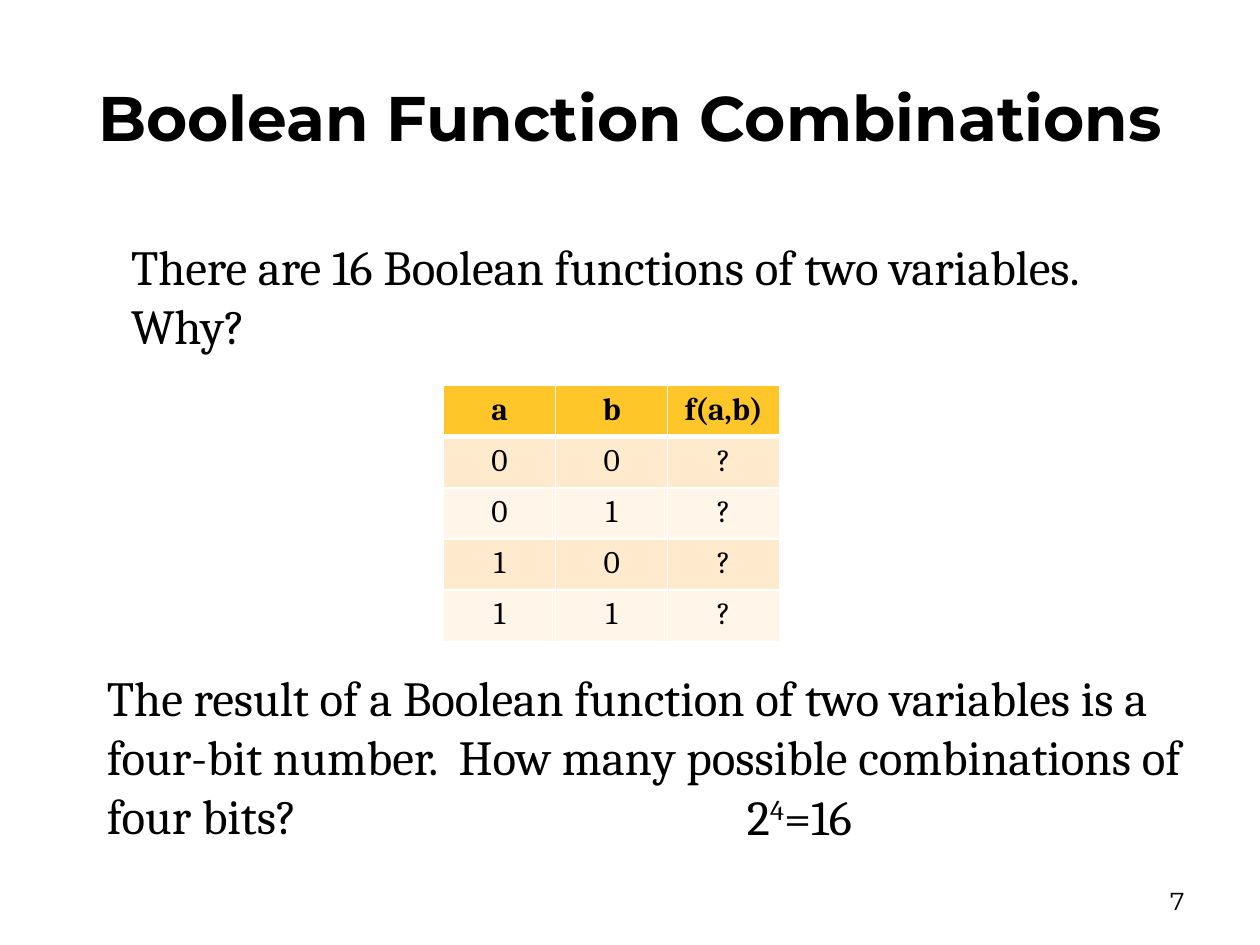
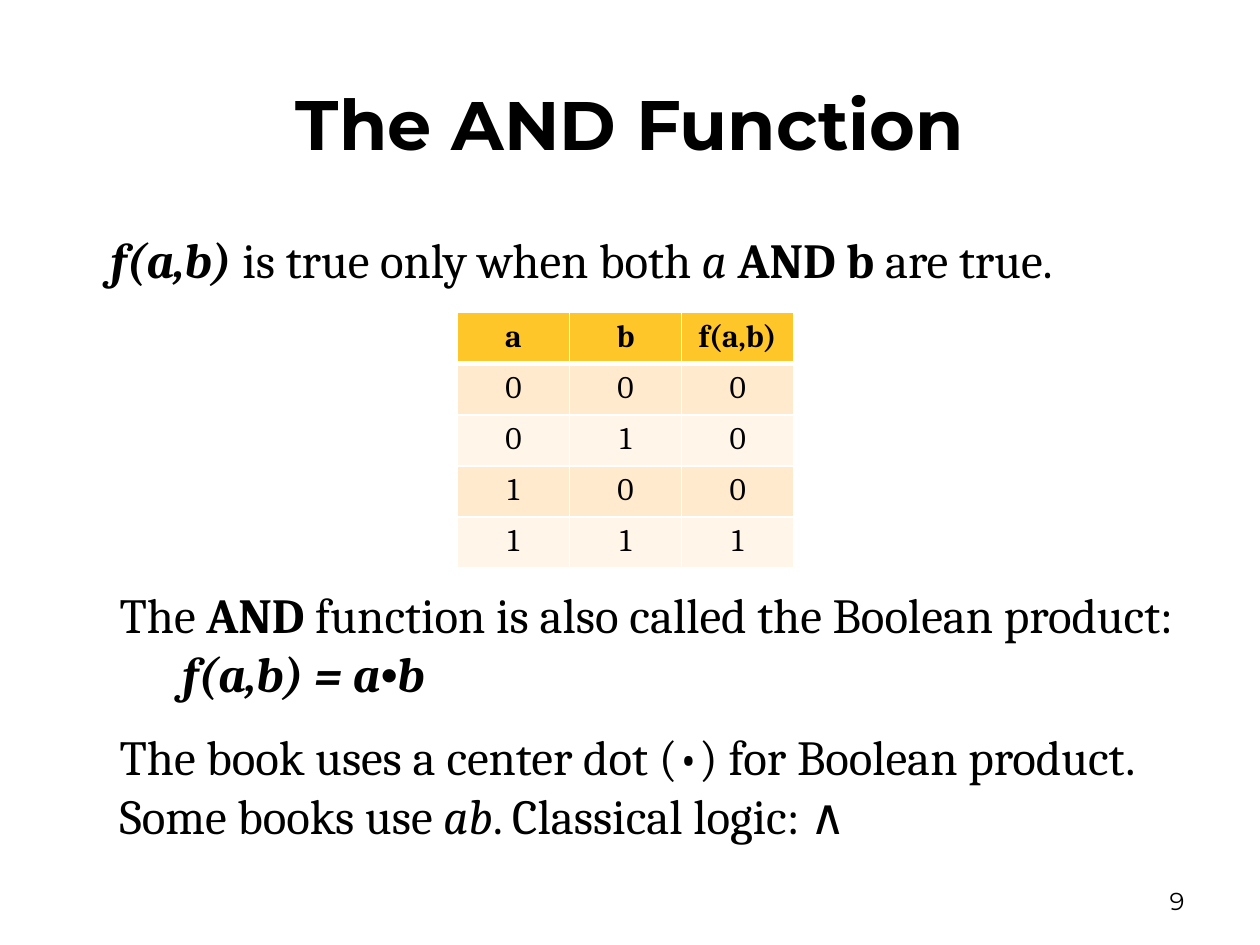
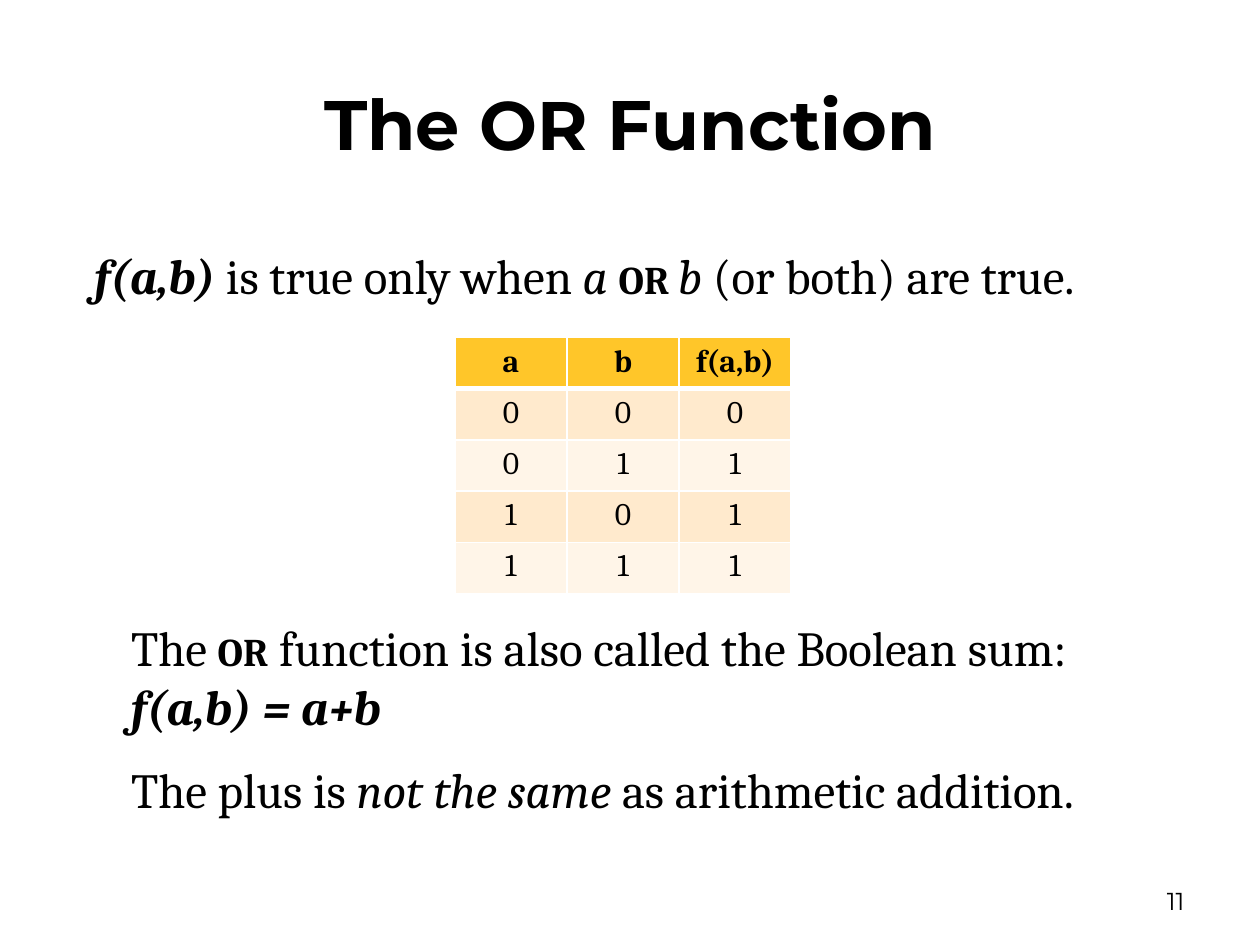
"""Build three slides on Boolean functions of two variables."""
from dataclasses import dataclass

from lxml.etree import SubElement
from pptx import Presentation
from pptx.dml.color import RGBColor
from pptx.enum.text import MSO_ANCHOR, MSO_AUTO_SIZE, PP_ALIGN
from pptx.oxml.ns import qn
from pptx.util import Inches, Pt


@dataclass
class Theme:
    ink: str = "000000"
    gold: str = "FFC629"
    bands: tuple = ("FFEACD", "FFF5E8")
    rule: str = "FFFFFF"
    head: str = "Montserrat"
    body: str = "Cambria"
    sign: str = "Times New Roman"
    text: int = 28
    cell: int = 18
    page: int = 14
    gap: int = 14


theme = Theme()


def write(frame, paras, face, size, align=PP_ALIGN.LEFT):
    """Fill a frame; flags: b bold, i italic, c small caps, u superscript, t sign font, L large."""
    for row, runs in enumerate(paras):
        para = frame.paragraphs[0] if row == 0 else frame.add_paragraph()
        para.alignment = align
        para.space_before = Pt(theme.gap if row else 0)
        for text, flags in runs:
            run = para.add_run()
            run.text = text
            font = run.font
            font.name = theme.sign if "t" in flags else face
            font.size = Pt(49 if "L" in flags else size)
            font.bold = "b" in flags
            font.italic = "i" in flags
            font.color.rgb = RGBColor.from_string(theme.ink)
            if "c" in flags:
                font._element.set("cap", "small")
            if "u" in flags:
                font._element.set("baseline", "30000")


def place(slide, spot, paras, inset=(0.12, 0.06)):
    """Add a wrapped body text box."""
    box = slide.shapes.add_textbox(*map(Inches, spot))
    frame = box.text_frame
    frame.word_wrap = True
    frame.auto_size = MSO_AUTO_SIZE.SHAPE_TO_FIT_TEXT
    frame.margin_left = frame.margin_right = Inches(inset[0])
    frame.margin_top = frame.margin_bottom = Inches(inset[1])
    write(frame, paras, theme.body, theme.text)


slim = (0.1, 0.05)
pages = [
    {
        "title": [("Boolean Function Combinations", "b")],
        "size": 36,
        "page": "7",
        "grid": (3.52, 3.06),
        "outs": "????",
        "boxes": [
            ((0.92, 1.82, 8.16, 1.1),
             [[("There are 16 Boolean functions of two variables.  Why?", "")]]),
            ((0.75, 5.25, 8.75, 1.51),
             [[("The result of a Boolean function of two variables is a four-bit number.  "
                "How many possible combinations of four bits?", "")]], slim),
            ((5.83, 6.19, 1.42, 0.57), [[("2", ""), ("4", "u"), ("=16", "")]], slim),
        ],
    },
    {
        "title": [("The ", "b"), ("and", "bcL"), (" Function", "b")],
        "size": 40,
        "page": "9",
        "grid": (3.63, 2.48),
        "outs": "0001",
        "boxes": [
            ((0.76, 1.76, 8.5, 0.61),
             [[("f(a,b)", "bi"), (" is true only when both ", ""), ("a ", "i"),
               ("AND b", "b"), (" are true.", "")]]),
            ((0.83, 4.58, 8.67, 2.32),
             [[("The ", ""), ("AND", "b"),
               (" function is also called the Boolean product: \t", ""),
               ("f(a,b) = a", "bi"), ("•", "bit"), ("b", "bi")],
              [("The book uses a center dot (•) for Boolean product. Some books use ", ""),
               ("ab", "i"), (". Classical logic: ∧", "")]]),
        ],
    },
    {
        "title": [("The ", "b"), ("or", "bcL"), (" Function", "b")],
        "size": 40,
        "page": "11",
        "grid": (3.61, 2.68),
        "outs": "0111",
        "boxes": [
            ((0.63, 1.89, 8.98, 0.61),
             [[("f(a,b)", "bi"), (" is true only when ", ""), ("a ", "i"),
               ("or ", "bc"), ("b", "i"), (" (or both) are true.", "")]]),
            ((0.92, 4.84, 8.44, 1.77),
             [[("The ", ""), ("or", "bc"),
               (" function is also called the Boolean sum: \t", ""),
               ("f(a,b) = a+b", "bi")],
              [("The plus is ", ""), ("not the same ", "i"),
               ("as arithmetic addition.", "")]]),
        ],
    },
]

deck = Presentation()
deck.slide_width, deck.slide_height = Inches(10), Inches(7.5)

for page in pages:
    slide = deck.slides.add_slide(deck.slide_layouts[5])
    title = slide.shapes.title
    title.left, title.top = Inches(0.5), Inches(0.3)
    title.width, title.height = Inches(9), Inches(1.25)
    title.text_frame.vertical_anchor = MSO_ANCHOR.MIDDLE
    title.text_frame.auto_size = MSO_AUTO_SIZE.NONE
    write(title.text_frame, [page["title"]], theme.head, page["size"], PP_ALIGN.CENTER)

    foot = slide.shapes.add_textbox(Inches(7.17), Inches(6.95), Inches(2.33), Inches(0.4))
    foot.text_frame.word_wrap = True
    foot.text_frame.vertical_anchor = MSO_ANCHOR.MIDDLE
    write(foot.text_frame, [[(page["page"], "")]], theme.head, theme.page, PP_ALIGN.RIGHT)

    for box in page["boxes"]:
        place(slide, *box)

    left, top = page["grid"]
    table = slide.shapes.add_table(
        5, 3, Inches(left), Inches(top), Inches(2.67), Inches(2.03)).table
    table.first_row = True
    table.horz_banding = False
    rows = [("a", "b", "f(a,b)")]
    rows += [(*f"{num:02b}", out) for num, out in enumerate(page["outs"])]
    for row, texts in enumerate(rows):
        for col, text in enumerate(texts):
            cell = table.cell(row, col)
            flags = "" if row else "b"
            write(cell.text_frame, [[(text, flags)]], theme.body, theme.cell, PP_ALIGN.CENTER)
            props = cell._tc.get_or_add_tcPr()
            for side in "LRTB":
                thick = (row, side) in ((0, "B"), (1, "T"))
                line = SubElement(props, qn(f"a:ln{side}"), w=str(Pt(3 if thick else 1)))
                fill = SubElement(line, qn("a:solidFill"))
                SubElement(fill, qn("a:srgbClr"), val=theme.rule)
            cell.fill.solid()
            shade = theme.bands[(row - 1) % 2] if row else theme.gold
            cell.fill.fore_color.rgb = RGBColor.from_string(shade)

deck.save("out.pptx")
